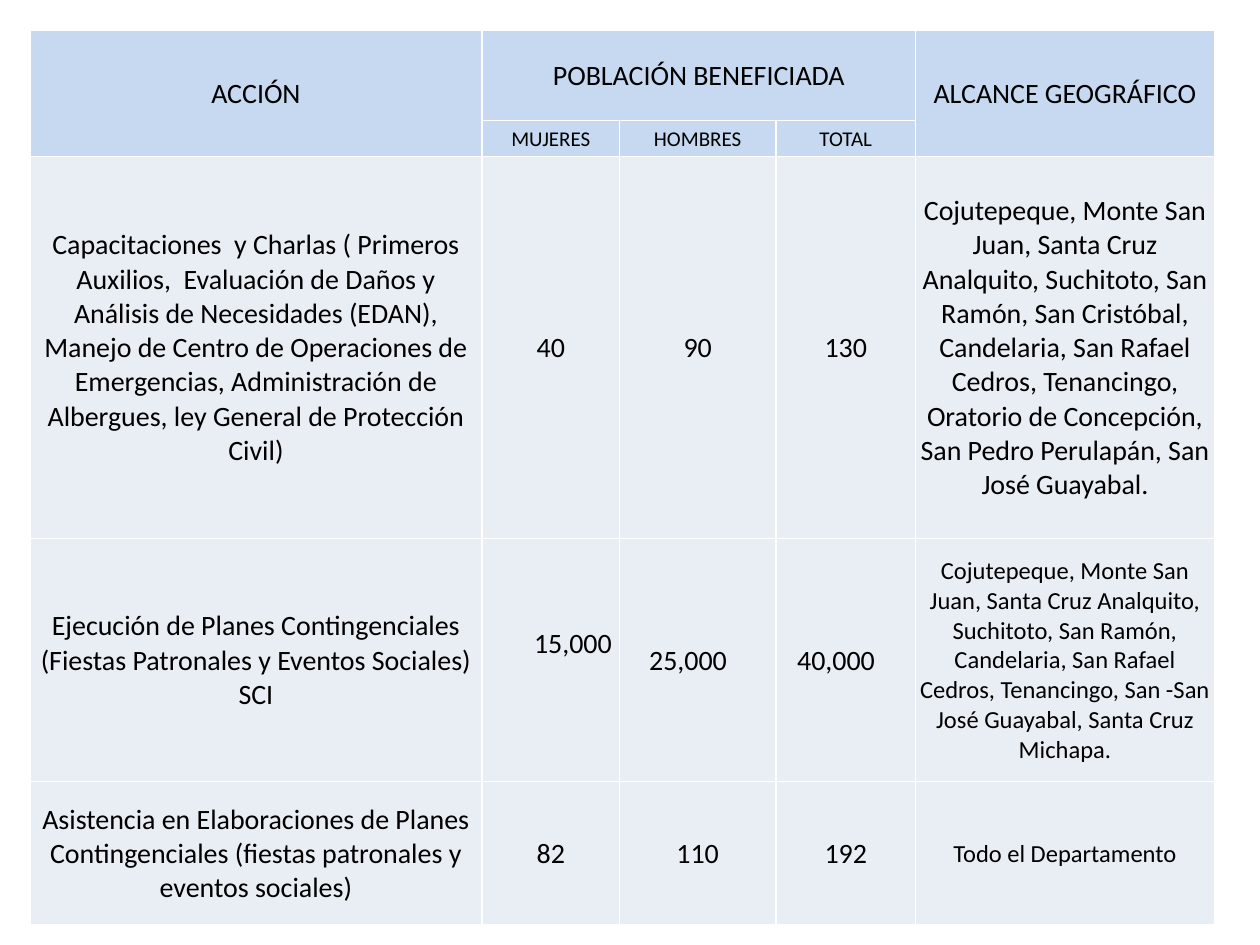
from lxml import etree
from pptx import Presentation
from pptx import util as u
from pptx.dml.color import RGBColor
from pptx.enum import text
from pptx.oxml.ns import qn

HUES = {"head": "C6D9F1", "body": "E9EDF4", "edge": "FFFFFF", "ink": "000000"}
COLS = [9.12, 2.77, 3.15, 2.82, 6.02]
ROWS = [1.83, 0.53, 7.7, 4.9, 2.9]
MERGES = [((0, 0), (1, 0)), ((0, 1), (0, 3)), ((0, 4), (1, 4))]
DATA = [
    ["ACCIÓN", "POBLACIÓN BENEFICIADA", "", "", "ALCANCE GEOGRÁFICO"],
    ["", "MUJERES", "HOMBRES", "TOTAL", ""],
    ["Capacitaciones  y Charlas ( Primeros Auxilios,  Evaluación de Daños y "
     "Análisis de Necesidades (EDAN), Manejo de Centro de Operaciones de "
     "Emergencias, Administración de Albergues, ley General de Protección Civil)",
     "40", "90", "130",
     "Cojutepeque, Monte San Juan, Santa Cruz Analquito, Suchitoto, San Ramón, "
     "San Cristóbal, Candelaria, San Rafael Cedros, Tenancingo, Oratorio de "
     "Concepción, San Pedro Perulapán, San José Guayabal."],
    ["Ejecución de Planes Contingenciales (Fiestas Patronales y Eventos Sociales) SCI",
     "15,000", "25,000", "40,000",
     "Cojutepeque, Monte San Juan, Santa Cruz Analquito, Suchitoto, San Ramón, "
     "Candelaria, San Rafael Cedros, Tenancingo, San -San José Guayabal, "
     "Santa Cruz Michapa."],
    ["Asistencia en Elaboraciones de Planes Contingenciales (fiestas patronales y "
     "eventos sociales)", "82", "110", "192", "Todo el Departamento"],
]
SIZES = {(1, 1): 12, (1, 2): 12, (1, 3): 12, (3, 4): 14, (4, 4): 14}
SHIFTS = {
    (3, 1): {"margin_left": u.Cm(0.92), "margin_bottom": u.Cm(0.69)},
    (3, 2): {"margin_right": u.Cm(0.42)},
    (3, 3): {"margin_right": u.Cm(0.42)},
}


def apply(item, form):
    for key, value in form.items():
        setattr(item, key, value)


class Deck:
    font = {"name": "Calibri", "bold": False}
    pad = {
        "margin_left": u.Cm(0.03),
        "margin_right": u.Cm(0.03),
        "margin_top": u.Cm(0.03),
        "margin_bottom": 0,
        "vertical_anchor": text.MSO_ANCHOR.MIDDLE,
    }

    def __init__(self):
        self.file = Presentation()
        apply(self.file, {"slide_width": u.Cm(25.4), "slide_height": u.Cm(19.05)})
        self.slide = self.file.slides.add_slide(self.file.slide_layouts[6])

    def color(self, name):
        return RGBColor.from_string(HUES[name])

    def edge(self, cell):
        props = cell._tc.get_or_add_tcPr()
        for side in "LRTB":
            line = etree.SubElement(props, qn(f"a:ln{side}"), w=str(u.Pt(1)))
            fill = etree.SubElement(line, qn("a:solidFill"))
            etree.SubElement(fill, qn("a:srgbClr"), val=HUES["edge"])

    def cell(self, cell, words, size, hue, shift):
        self.edge(cell)
        cell.fill.solid()
        cell.fill.fore_color.rgb = self.color(hue)
        apply(cell, self.pad | shift)
        para = cell.text_frame.paragraphs[0]
        para.alignment = text.PP_ALIGN.CENTER
        para.font.size = u.Pt(size)
        if words:
            run = para.add_run()
            run.text = words
            apply(run.font, self.font | {"size": u.Pt(size)})
            run.font.color.rgb = self.color("ink")

    def table(self, left, top):
        grid = self.slide.shapes.add_table(
            len(ROWS), len(COLS), u.Cm(left), u.Cm(top),
            u.Cm(sum(COLS)), u.Cm(sum(ROWS))).table
        apply(grid, {"first_row": False, "horz_banding": False})
        for col, width in zip(grid.columns, COLS):
            col.width = u.Cm(width)
        for row, height in zip(grid.rows, ROWS):
            row.height = u.Cm(height)
        for start, end in MERGES:
            grid.cell(*start).merge(grid.cell(*end))
        for r, line in enumerate(DATA):
            for c, words in enumerate(line):
                spot = r, c
                self.cell(grid.cell(r, c), words, SIZES.get(spot, 12 if r == 1 else 16),
                          "head" if r < 2 else "body", SHIFTS.get(spot, {}))


def main():
    deck = Deck()
    deck.table(0.6, 0.6)
    deck.file.save("out.pptx")


if __name__ == "__main__":
    main()
